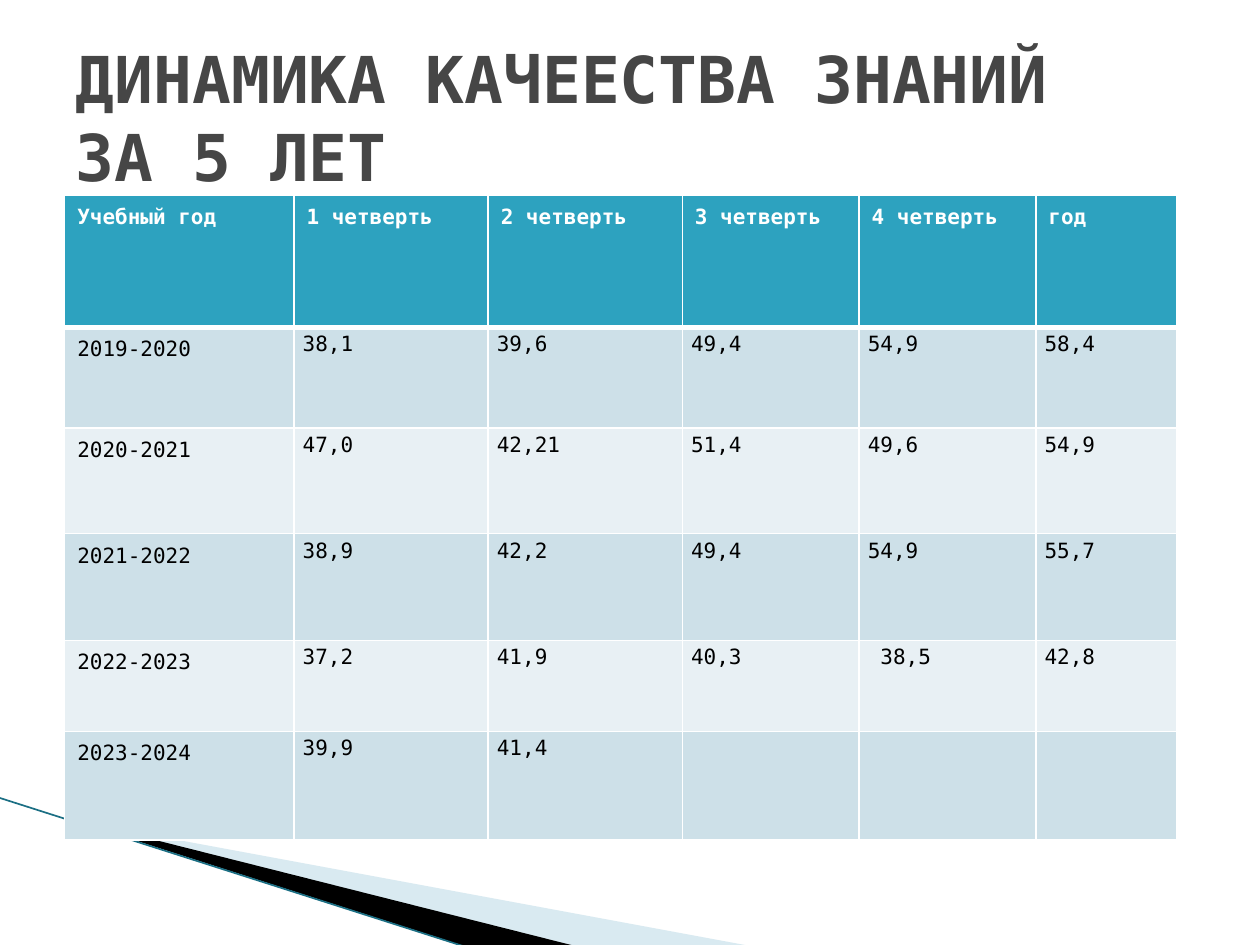
from dataclasses import dataclass

from lxml import etree
from pptx import Presentation
from pptx import util as u
from pptx.dml import color as col
from pptx.enum import shapes, text
from pptx.oxml import ns


@dataclass(frozen=True)
class Theme:
    face: str = "DejaVu Sans Mono"
    title: str = "464646"
    head: str = "2DA2BF"
    bands: tuple = ("CDE0E8", "E8F0F4")
    ink: str = "000000"
    white: str = "FFFFFF"
    pale: str = "A0CBDC"
    edge: str = "1B6F84"
    big: float = 36.9
    small: float = 12


def rgb(code):
    return col.RGBColor.from_string(code)


def put(obj, vals):
    for key, val in vals.items():
        setattr(obj, key, val)


def child(node, tag, **attrs):
    return etree.SubElement(node, ns.qn(tag), attrs)


class Deck:
    def __init__(self, theme, wide, high):
        self.theme = theme
        self.prs = Presentation()
        put(self.prs, {"slide_width": u.Pt(wide), "slide_height": u.Pt(high)})
        self.slide = self.prs.slides.add_slide(self.prs.slide_layouts[5])

    def style(self, font, size, ink, bold):
        put(font, {"name": self.theme.face, "size": u.Pt(size), "bold": bold})
        font.color.rgb = rgb(ink)

    def title(self, words, box):
        shape = self.slide.shapes.title
        put(shape, dict(zip(("left", "top", "width", "height"), map(u.Pt, box))))
        frame = shape.text_frame
        put(frame, {"text": words, "word_wrap": True,
                    "auto_size": text.MSO_AUTO_SIZE.NONE,
                    "vertical_anchor": text.MSO_ANCHOR.MIDDLE})
        para = frame.paragraphs[0]
        para.alignment = text.PP_ALIGN.LEFT
        for run in para.runs:
            self.style(run.font, self.theme.big, self.theme.title, True)

    def wedge(self, pts, fill, alpha=None):
        pts = [(u.Pt(x), u.Pt(y)) for x, y in pts]
        form = self.slide.shapes.build_freeform(*pts[0])
        form.add_line_segments(pts[1:], close=True)
        shape = form.convert_to_shape()
        shape.shadow.inherit = False
        shape.fill.solid()
        shape.fill.fore_color.rgb = rgb(fill)
        shape.line.fill.background()
        if alpha:
            tint = shape._element.spPr.find(".//" + ns.qn("a:srgbClr"))
            child(tint, "a:alpha", val=str(alpha * 1000))

    def line(self, start, end, ink, width):
        ends = map(u.Pt, start + end)
        wire = self.slide.shapes.add_connector(shapes.MSO_CONNECTOR.STRAIGHT, *ends)
        wire.line.color.rgb = rgb(ink)
        wire.line.width = u.Pt(width)
        child(wire._element.spPr, "a:effectLst")

    def border(self, cell, base):
        props = cell._tc.get_or_add_tcPr()
        sides = {"a:lnL": 1, "a:lnR": 1, "a:lnT": 1, "a:lnB": base}
        for spot, (tag, width) in enumerate(sides.items()):
            edge = etree.Element(ns.qn(tag), w=str(u.Pt(width)))
            child(child(edge, "a:solidFill"), "a:srgbClr", val=self.theme.white)
            props.insert(spot, edge)

    def cell(self, cell, words, row, num):
        head = row == 0
        fill = self.theme.head if head else self.theme.bands[(row - 1) % 2]
        cell.fill.solid()
        cell.fill.fore_color.rgb = rgb(fill)
        self.border(cell, 3 if head else 1)
        if not head and num:
            put(cell, {"margin_left": u.Pt(5), "margin_right": u.Pt(5),
                       "margin_top": u.Pt(0.7), "margin_bottom": 0})
        if words:
            cell.text = words
            para = cell.text_frame.paragraphs[0]
            put(para, {"alignment": text.PP_ALIGN.JUSTIFY, "line_spacing": 1.15})
            ink = self.theme.white if head else self.theme.ink
            self.style(para.runs[0].font, self.theme.small, ink, head)

    def table(self, data, left, top, cols, rows):
        box = map(u.Pt, (left, top, sum(cols), sum(rows)))
        grid = self.slide.shapes.add_table(len(rows), len(cols), *box).table
        for part, width in zip(grid.columns, cols):
            part.width = u.Pt(width)
        for part, height in zip(grid.rows, rows):
            part.height = u.Pt(height)
        for r, vals in enumerate(data):
            for c, words in enumerate(vals):
                self.cell(grid.cell(r, c), words, r, c)


def main():
    theme = Theme()
    deck = Deck(theme, 720, 540)

    # Corner decoration
    deck.wedge([(39.6, 468.5), (428.4, 540.5), (328.3, 540.5)], theme.pale, 40)
    deck.wedge([(38.2, 467.3), (329, 540.7), (267.8, 541.4), (38.9, 468)], theme.ink)
    deck.line((-0.7, 455.8), (267.1, 541.4), theme.edge, 0.95)

    # Title
    deck.title("ДИНАМИКА КАЧЕЕСТВА ЗНАНИЙ \vЗА 5 ЛЕТ", (36, 21.6, 648, 90))

    # Results by school year
    terms = [f"{n} четверть" for n in range(1, 5)]
    data = [
        ["Учебный год", *terms, "год"],
        ["2019-2020", "38,1", "39,6", "49,4", "54,9", "58,4"],
        ["2020-2021", "47,0", "42,21", "51,4", "49,6", "54,9"],
        ["2021-2022", "38,9", "42,2", "49,4", "54,9", "55,7"],
        ["2022-2023", "37,2", "41,9", "40,3", " 38,5", "42,8"],
        ["2023-2024", "39,9", "41,4", "", "", ""],
    ]
    deck.table(data, 37, 111.5, (131, 111, 111, 101, 101, 80.5),
               (75.5, 57.5, 60.5, 61, 52, 62))

    deck.prs.save("out.pptx")


if __name__ == "__main__":
    main()
